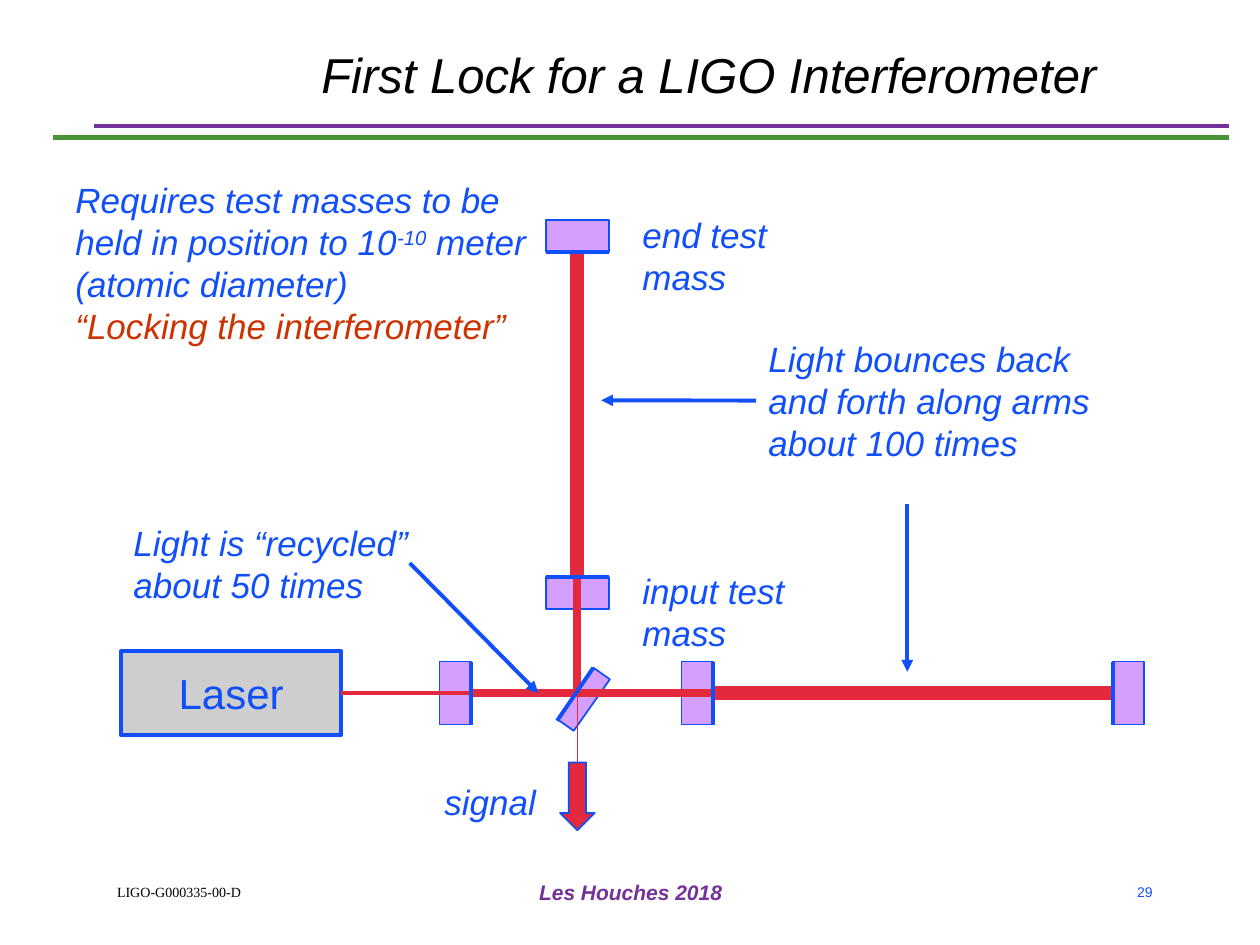
"""Build the slide on the first lock of an interferometer."""
from dataclasses import dataclass

from lxml.etree import SubElement
from pptx import Presentation
from pptx.dml.color import RGBColor
from pptx.enum.shapes import MSO_CONNECTOR, MSO_SHAPE
from pptx.enum.text import MSO_ANCHOR, MSO_AUTO_SIZE, PP_ALIGN
from pptx.oxml.ns import qn
from pptx.util import Cm, Pt


@dataclass(frozen=True)
class Theme:
    font: str = "Arial"
    serif: str = "Times New Roman"
    black: str = "000000"
    blue: str = "114FFB"
    red: str = "E3293B"
    rust: str = "CC3300"
    mirror: str = "D49FFF"
    grey: str = "CECECE"
    purple: str = "743199"
    green: str = "499337"
    title: int = 28
    laser: int = 24
    body: int = 20
    footer: int = 12
    small: int = 8
    wide: float = 8
    medium: float = 4.5
    rule: float = 3
    stroke: float = 2.25
    thin: float = 1


T = Theme()
BEAM_X, BEAM_Y = 11.64, 13.97
LONG, DEPTH = 1.27, 0.64

TITLE = "First Lock for a LIGO Interferometer"
LABELS = {
    "end": ("end test\vmass", (12.7, 4.17, 4.9, 1.96)),
    "bounce": ("Light bounces back and forth along arms about 100 times",
               (15.24, 6.68, 7.19, 2.79)),
    "input": ("input test\vmass", (12.7, 11.35, 5.26, 1.96)),
    "recycle": ("Light is “recycled” about 50 times", (2.44, 10.39, 7.09, 1.96)),
    "signal": ("signal", (8.71, 15.6, 2.36, 1.09)),
}
LOCKING = [
    [("Requires test masses to be held in position to 10", {}),
     ("-10", {"base": 30}), (" meter (atomic diameter)", {})],
    [("“Locking the interferometer”", {"color": T.rust})],
]
FOOTERS = [
    ("LIGO-G000335-00-D", (2.11, 17.7, 4.65, 0.58),
     dict(size=T.small, font=T.serif, color=T.black, italic=False)),
    ("Les Houches 2018", (8.69, 17.35, 8.05, 1.27),
     dict(size=T.footer, color=T.purple, bold=True, align=PP_ALIGN.CENTER)),
    ("29", (18.21, 17.35, 5.28, 1.27),
     dict(size=T.small, italic=False, align=PP_ALIGN.RIGHT)),
]
RULES = [(1.07, 2.77, T.green, T.rule), (1.9, 2.54, T.purple, T.stroke)]
LYING = {"end_y": 4.44, "input_y": 11.64}
STANDING = {"end_x": 22.43, "input_x": 13.74, "recycling": 8.86}
FACES = [
    ((11.0, 5.08), (12.27, 5.08)),
    ((11.0, 11.64), (12.27, 11.64)),
    ((11.23, 14.53), (11.96, 13.46)),
] + [((x, BEAM_Y + LONG / 2), (x, BEAM_Y - LONG / 2)) for x in (14.38, 9.5, 22.43)]


def rgb(code):
    return RGBColor.from_string(code)


def write(tf, content, anchor=MSO_ANCHOR.TOP, align=PP_ALIGN.LEFT, wrap=True, **fmt):
    """Fill a text frame with a string or with paragraphs of formatted runs."""
    tf.word_wrap, tf.vertical_anchor = wrap, anchor
    tf.auto_size = MSO_AUTO_SIZE.NONE
    paragraphs = [[(content, {})]] if isinstance(content, str) else content
    for i, runs in enumerate(paragraphs):
        p = tf.add_paragraph() if i else tf.paragraphs[0]
        p.alignment = align
        for text, extra in runs:
            style = dict(size=T.body, font=T.font, color=T.blue,
                         italic=True, bold=False, base=0) | fmt | extra
            for j, line in enumerate(text.split("\v")):
                if j:
                    p.add_line_break()
                r = p.add_run()
                r.text = line
                r.font.size, r.font.name = Pt(style["size"]), style["font"]
                r.font.italic, r.font.bold = style["italic"], style["bold"]
                r.font.color.rgb = rgb(style["color"])
                if style["base"]:
                    r._r.get_or_add_rPr().set("baseline", str(style["base"] * 1000))


def add_label(s, content, box, **fmt):
    sp = s.shapes.add_textbox(*map(Cm, box))
    write(sp.text_frame, content, **fmt)
    return sp


def add_block(s, box, fill, kind=MSO_SHAPE.RECTANGLE, width=T.thin):
    sp = s.shapes.add_shape(kind, *map(Cm, box))
    sp.shadow.inherit = False
    sp.fill.solid()
    sp.fill.fore_color.rgb = rgb(fill)
    sp.line.color.rgb, sp.line.width = rgb(T.blue), Pt(width)
    return sp


def add_line(s, start, end, color=T.blue, width=T.stroke, arrow=False):
    """Draw a line between points or (shape, side) joints."""
    joints = [p if not isinstance(p[0], (int, float)) else None for p in (start, end)]
    points = [(0, 0) if joint else p for p, joint in zip((start, end), joints)]
    line = s.shapes.add_connector(
        MSO_CONNECTOR.STRAIGHT, *(Cm(v) for point in points for v in point))
    for joint, connect in zip(joints, (line.begin_connect, line.end_connect)):
        if joint:
            connect(*joint)
    line.line.color.rgb, line.line.width = rgb(color), Pt(width)
    if arrow:
        SubElement(line.line._get_or_add_ln(), qn("a:tailEnd"), type="triangle")
    SubElement(line._element.spPr, qn("a:effectLst"))
    return line


def main():
    prs = Presentation()
    prs.slide_width, prs.slide_height = Cm(25.4), Cm(19.05)
    s = prs.slides.add_slide(prs.slide_layouts[5])

    title = s.shapes.title
    title.left, title.top, title.width, title.height = map(Cm, (4.23, 0.74, 20.12, 1.47))
    write(title.text_frame, TITLE, anchor=MSO_ANCHOR.BOTTOM,
          align=PP_ALIGN.CENTER, size=T.title, color=T.black)
    for x, y, color, width in RULES:
        add_line(s, (x, y), (24.77, y), color, width)
    for text, box, fmt in FOOTERS:
        add_label(s, text, box, anchor=MSO_ANCHOR.MIDDLE, **fmt)

    splitter = add_block(s, (11.13, 13.89, LONG, 0.41), T.mirror)
    splitter.rotation = 305.1
    mirrors = {name: add_block(s, (BEAM_X - LONG / 2, y, LONG, DEPTH), T.mirror)
               for name, y in LYING.items()}
    mirrors |= {name: add_block(s, (x, BEAM_Y - LONG / 2, DEPTH, LONG), T.mirror)
                for name, x in STANDING.items()}
    laser = add_block(s, (2.44, BEAM_Y - 0.85, 4.44, 1.7), T.grey, width=T.stroke)
    write(laser.text_frame, "Laser", anchor=MSO_ANCHOR.MIDDLE, wrap=False,
          align=PP_ALIGN.CENTER, size=T.laser, italic=False)

    center = (BEAM_X, BEAM_Y)
    for start, end, width in [
        ((mirrors["end_y"], 2), (mirrors["input_y"], 0), T.wide),
        ((mirrors["end_x"], 1), (mirrors["input_x"], 3), T.wide),
        ((mirrors["input_x"], 3), (mirrors["recycling"], 3), T.medium),
        ((mirrors["input_y"], 0), center, T.medium),
        ((13.54, BEAM_Y), (laser, 3), T.stroke),
        (center, (BEAM_X, 15.88), T.thin),
    ]:
        add_line(s, start, end, T.red, width)
    add_block(s, (BEAM_X - 0.35, 15.37, 0.7, 1.37), T.red, MSO_SHAPE.DOWN_ARROW)
    for start, end in FACES:
        add_line(s, start, end)

    labels = {name: add_label(s, text, box) for name, (text, box) in LABELS.items()}
    add_label(s, LOCKING, (1.27, 3.48, 9.65, 3.63))
    for start, end in [
        ((8.26, 11.35), (10.85, BEAM_Y)),
        ((labels["bounce"], 1), (12.12, 8.07)),
        ((18.29, 10.16), (18.29, 13.54)),
    ]:
        add_line(s, start, end, arrow=True)

    prs.save("out.pptx")


if __name__ == "__main__":
    main()
